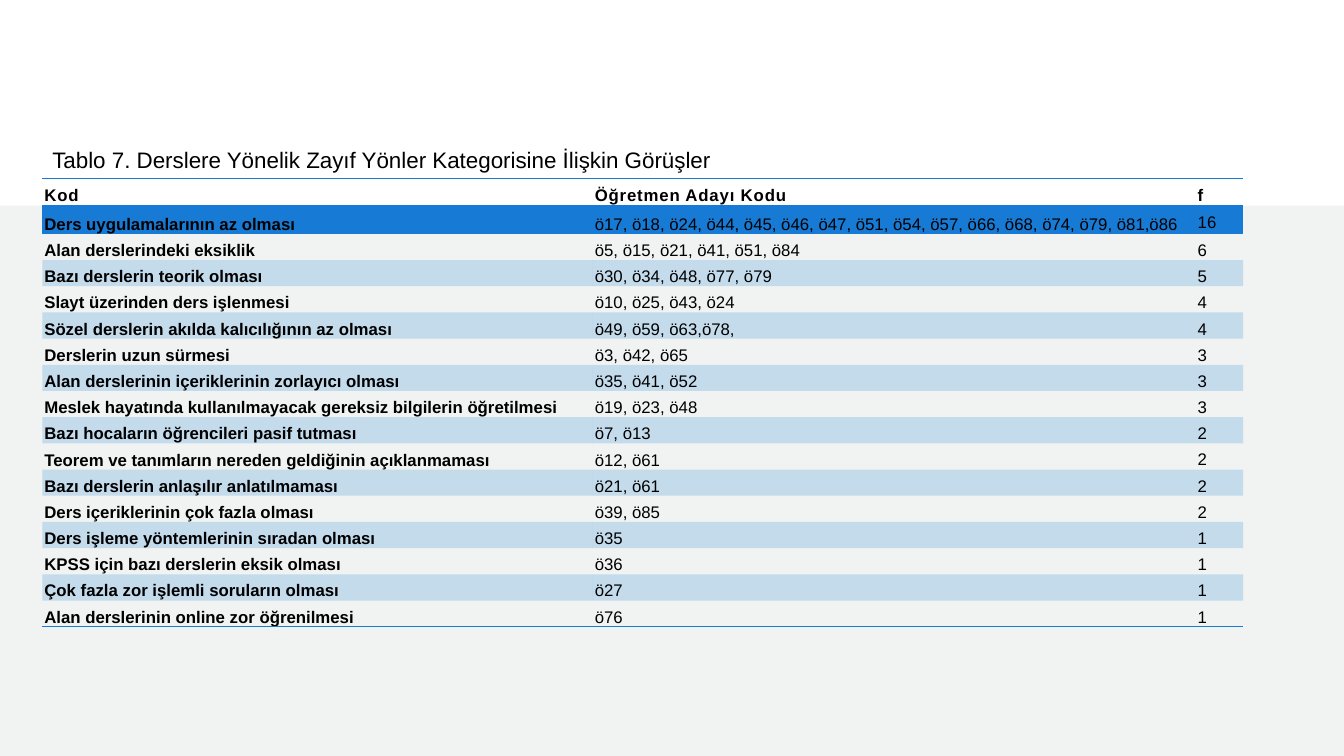
import pptx
import pptx.dml.color
import pptx.enum.shapes
import pptx.enum.text
import pptx.oxml.ns
import pptx.util
from lxml import etree

WIDTH, HEIGHT = 13.33, 7.5
BLUE, BLACK, WHITE, PALE = "177BD5", "000000", "FFFFFF", "F0F3F2"
FONT = "Arial"
TITLE = "Tablo 7. Derslere Yönelik Zayıf Yönler Kategorisine İlişkin Görüşler"
HEADINGS = ("Kod", "Öğretmen Adayı Kodu", "f")
OPINIONS = [
    ("Ders uygulamalarının az olması",
     "ö17, ö18, ö24, ö44, ö45, ö46, ö47, ö51, ö54, ö57, ö66, ö68, ö74, ö79, ö81,ö86", "16"),
    ("Alan derslerindeki eksiklik", "ö5, ö15, ö21, ö41, ö51, ö84", "6"),
    ("Bazı derslerin teorik olması", "ö30, ö34, ö48, ö77, ö79", "5"),
    ("Slayt üzerinden ders işlenmesi", "ö10, ö25, ö43, ö24", "4"),
    ("Sözel derslerin akılda kalıcılığının az olması", "ö49, ö59, ö63,ö78,", "4"),
    ("Derslerin uzun sürmesi", "ö3, ö42, ö65", "3"),
    ("Alan derslerinin içeriklerinin zorlayıcı olması", "ö35, ö41, ö52", "3"),
    ("Meslek hayatında kullanılmayacak gereksiz bilgilerin öğretilmesi", "ö19, ö23, ö48", "3"),
    ("Bazı hocaların öğrencileri pasif tutması", "ö7, ö13", "2"),
    ("Teorem ve tanımların nereden geldiğinin açıklanmaması", "ö12, ö61", "2"),
    ("Bazı derslerin anlaşılır anlatılmaması", "ö21, ö61", "2"),
    ("Ders içeriklerinin çok fazla olması", "ö39, ö85", "2"),
    ("Ders işleme yöntemlerinin sıradan olması", "ö35", "1"),
    ("KPSS için bazı derslerin eksik olması", "ö36", "1"),
    ("Çok fazla zor işlemli soruların olması", "ö27", "1"),
    ("Alan derslerinin online zor öğrenilmesi", "ö76", "1"),
]


def inches(*lengths):
    return [pptx.util.Inches(length) for length in lengths]


def paint(target, color, alpha=None):
    target.solid()
    target.fore_color.rgb = pptx.dml.color.RGBColor.from_string(color)
    if alpha is not None:
        tone = target._xPr.find(".//" + pptx.oxml.ns.qn("a:srgbClr"))
        etree.SubElement(tone, pptx.oxml.ns.qn("a:alpha"), val=str(alpha * 1000))


def write(frame, text, size=12, bold=False, tracking=0, line_spacing=None, after=0):
    paragraph = frame.paragraphs[0]
    paragraph.space_after = pptx.util.Pt(after)
    if line_spacing:
        paragraph.line_spacing = line_spacing
    run = paragraph.add_run()
    run.text = text
    run.font.name = FONT
    run.font.size = pptx.util.Pt(size)
    run.font.bold = bold
    paint(run.font.fill, BLACK)
    if tracking:
        run.font._element.set("spc", str(round(tracking * 100)))


def add_panel(slide, box, color):
    panel = slide.shapes.add_shape(pptx.enum.shapes.MSO_SHAPE.RECTANGLE, *inches(*box))
    panel.shadow.inherit = False
    paint(panel.fill, color)
    panel.line.fill.background()


def add_title(slide, box):
    title = slide.shapes.add_textbox(*inches(*box))
    title.text_frame.word_wrap = True
    write(title.text_frame, TITLE, size=16)


def set_edges(cell, ruled_sides):
    properties = cell._tc.get_or_add_tcPr()
    for side in ("lnL", "lnR", "lnT", "lnB"):
        edge = etree.SubElement(properties, pptx.oxml.ns.qn("a:" + side), w="12700")
        if side in ruled_sides:
            fill = etree.SubElement(edge, pptx.oxml.ns.qn("a:solidFill"))
            etree.SubElement(fill, pptx.oxml.ns.qn("a:srgbClr"), val=BLUE)
        else:
            etree.SubElement(edge, pptx.oxml.ns.qn("a:noFill"))


def add_opinion_table(slide, box):
    rows = [HEADINGS] + OPINIONS
    table = slide.shapes.add_table(len(rows), len(HEADINGS), *inches(*box)).table
    table.first_row = table.horz_banding = False
    for column, share in zip(table.columns, (0.4584, 0.5021, 0.0395)):
        column.width = pptx.util.Inches(box[2] * share)
    ruled_levels = {0, 1, len(rows)}
    anchors = pptx.enum.text.MSO_ANCHOR
    for r, texts in enumerate(rows):
        table.rows[r].height = pptx.util.Inches({0: 0.27, 1: 0.28}.get(r, 0.26))
        ruled_sides = [side for side, level in (("lnT", r), ("lnB", r + 1))
                       if level in ruled_levels]
        for c, text in enumerate(texts):
            cell = table.cell(r, c)
            (cell.margin_left, cell.margin_top,
             cell.margin_right, cell.margin_bottom) = inches(0.02, 0.06, 0.02, 0)
            cell.vertical_anchor = (anchors.MIDDLE if r == 0
                                    else anchors.TOP if c == 2 else anchors.BOTTOM)
            set_edges(cell, ruled_sides)
            if r % 2:
                paint(cell.fill, BLUE, alpha=20)
            else:
                cell.fill.background()
            write(cell.text_frame, text, bold=r == 0 or c == 0,
                  tracking=0.6 if r == 0 else 0, line_spacing=1.07, after=8)


def main():
    deck = pptx.Presentation()
    deck.slide_width, deck.slide_height = inches(WIDTH, HEIGHT)
    slide = deck.slides.add_slide(deck.slide_layouts[6])
    lower_top, table_left, table_top, table_width = 2.04, 0.42, 1.77, 11.91
    title_height = 0.37
    add_panel(slide, (0, 0, WIDTH, HEIGHT), WHITE)
    add_panel(slide, (0, lower_top, WIDTH, HEIGHT - lower_top), PALE)
    add_opinion_table(slide, (table_left, table_top, table_width, HEIGHT * 0.6))
    add_title(slide, (table_left, table_top - title_height, table_width * 0.75, title_height))
    deck.save("out.pptx")


if __name__ == "__main__":
    main()
